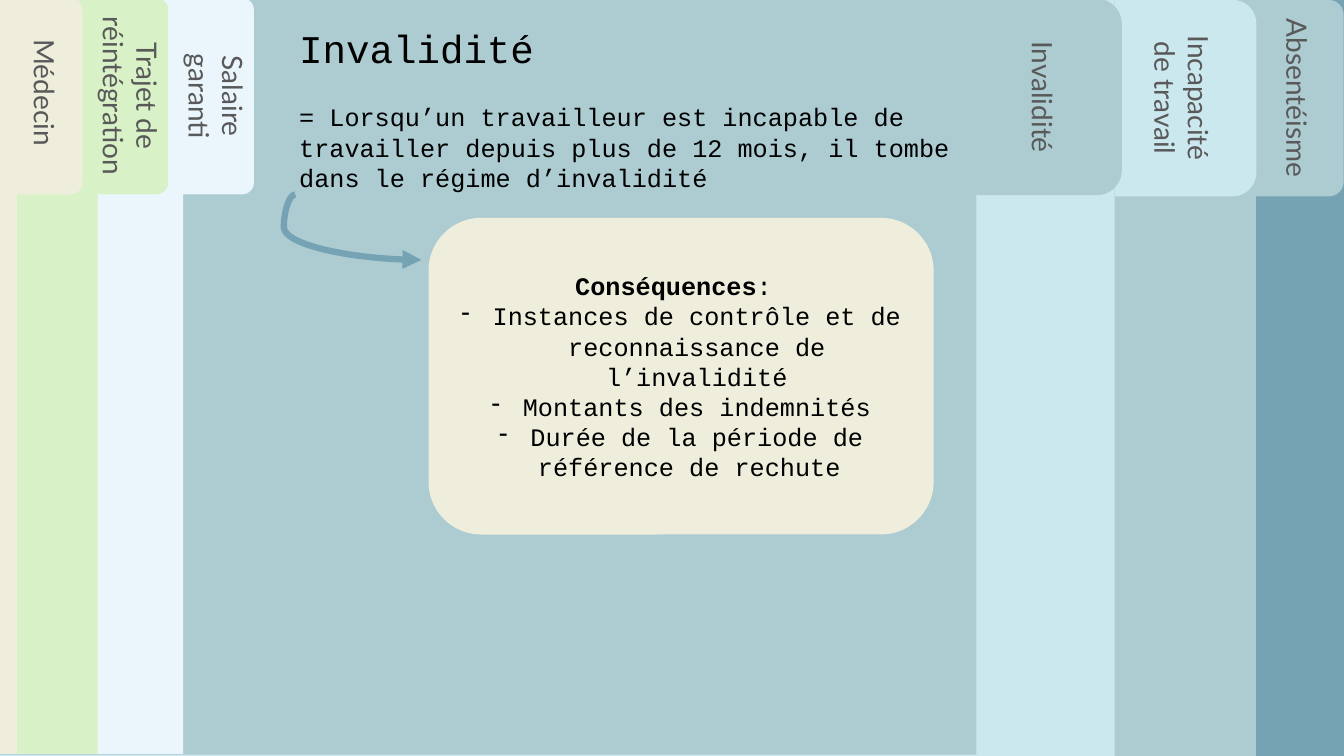
from lxml.etree import SubElement
from pptx import Presentation
from pptx.dml.color import RGBColor
from pptx.enum.shapes import MSO_CONNECTOR, MSO_SHAPE
from pptx.enum.text import MSO_ANCHOR, PP_ALIGN
from pptx.oxml.ns import qn
from pptx.util import Cm, Pt

STEEL = RGBColor(0x75, 0xA3, 0xB3)
TEAL = RGBColor(0xAC, 0xCC, 0xD1)
AQUA = RGBColor(0xCC, 0xE8, 0xEF)
ICE = RGBColor(0xEA, 0xF6, 0xFC)
GREEN = RGBColor(0xD8, 0xF1, 0xC7)
CREAM = RGBColor(0xEF, 0xEE, 0xDD)
GREY = RGBColor(0x59, 0x59, 0x59)
BLACK = RGBColor(0, 0, 0)

SLIDE_WIDTH, SLIDE_HEIGHT = 33.87, 19.05
TAB_HEIGHT = 4.95
TAB_FONT = {"name": "Lato", "size": Pt(20)}
TITLE_FONT = {"name": "Courier New", "size": Pt(28)}
BODY_FONT = {"name": "Courier New", "size": Pt(18)}

# Label, colour, top, right edge of the panel, left edge and width of the tab
DIVIDERS = [
    ("Absentéisme", TEAL, 0, 31.65, 31.65, 2.21),
    ("Incapacité de travail", AQUA, 0, 28.09, 28.1, 3.56),
    ("Invalidité", TEAL, -0.03, 24.61, 24.49, 3.78),
    ("Salaire garanti", ICE, -0.05, 4.62, 4.6, 1.8),
    ("Trajet de réintégration", GREEN, -0.05, 2.46, 2.44, 1.8),
    ("Médecin ", CREAM, -0.05, 0.43, 0.28, 1.8),
]
CONSEQUENCES = [
    "Instances de contrôle et de reconnaissance de l’invalidité",
    "Montants des indemnités",
    "Durée de la période de référence de rechute ",
]


def add_span(para, text, style, color=BLACK, bold=False):
    span = para.add_run()
    span.text = text
    for name, value in style.items():
        setattr(span.font, name, value)
    span.font.bold = bold
    span.font.color.rgb = color


def add_block(page, kind, left, top, width, height, color):
    block = page.shapes.add_shape(kind, Cm(left), Cm(top), Cm(width), Cm(height))
    block.shadow.inherit = False
    block.fill.solid()
    block.fill.fore_color.rgb = color
    block.line.fill.background()
    block.text_frame.word_wrap = True
    block.text_frame.vertical_anchor = MSO_ANCHOR.MIDDLE
    return block


def add_divider(page, label, color, top, panel_right, tab_left, tab_width):
    """Add a full-height panel and its tab, turned so that the label reads downwards."""
    add_block(page, MSO_SHAPE.RECTANGLE, 0, top, panel_right, SLIDE_HEIGHT, color)
    shift = (TAB_HEIGHT - tab_width) / 2
    tab = add_block(page, MSO_SHAPE.ROUND_2_SAME_RECTANGLE, tab_left - shift,
                    top + shift, TAB_HEIGHT, tab_width, color)
    tab.rotation = 90
    para = tab.text_frame.paragraphs[0]
    para.alignment = PP_ALIGN.CENTER
    add_span(para, label, TAB_FONT, GREY)


def add_text(page, left, top, width, height, text, style):
    box = page.shapes.add_textbox(Cm(left), Cm(top), Cm(width), Cm(height))
    box.text_frame.word_wrap = True
    add_span(box.text_frame.paragraphs[0], text, style)


def add_dash(para):
    properties = para._p.get_or_add_pPr()
    properties.set("marL", str(Cm(0.79)))
    properties.set("indent", str(-Cm(0.79)))
    SubElement(properties, qn("a:buChar"), char="-")


def add_consequences(page):
    card = add_block(page, MSO_SHAPE.ROUNDED_RECTANGLE, 10.8, 5.49, 12.73, 7.98, CREAM)
    heading = card.text_frame.paragraphs[0]
    heading.alignment = PP_ALIGN.CENTER
    add_span(heading, "Conséquences", BODY_FONT, bold=True)
    add_span(heading, ": ", BODY_FONT)
    for text in CONSEQUENCES:
        para = card.text_frame.add_paragraph()
        para.alignment = PP_ALIGN.CENTER
        add_dash(para)
        add_span(para, text, BODY_FONT)


def add_curved_arrow(page, start, end, bend):
    """Add a curved arrow; bend places its middle as a share of its width."""
    arrow = page.shapes.add_connector(MSO_CONNECTOR.CURVE, *map(Cm, start + end))
    arrow.line.color.rgb = STEEL
    arrow.line.width = Pt(4.5)
    properties = arrow._element.spPr
    guides = properties.find(qn("a:prstGeom")).find(qn("a:avLst"))
    SubElement(guides, qn("a:gd"), name="adj1", fmla=f"val {round(bend * 100000)}")
    SubElement(properties.find(qn("a:ln")), qn("a:tailEnd"), type="triangle")
    SubElement(properties, qn("a:effectLst"))


def main():
    deck = Presentation()
    deck.slide_width, deck.slide_height = Cm(SLIDE_WIDTH), Cm(SLIDE_HEIGHT)
    page = deck.slides.add_slide(deck.slide_layouts[6])
    page.background.fill.solid()
    page.background.fill.fore_color.rgb = STEEL
    for divider in DIVIDERS:
        add_divider(page, *divider)
    add_text(page, 7.29, 0.48, 14.2, 1.45, "Invalidité", TITLE_FONT)
    add_text(page, 7.29, 2.44, 16.97, 2.57,
             "= Lorsqu’un travailleur est incapable de travailler depuis plus de "
             "12 mois, il tombe dans le régime d’invalidité", BODY_FONT)
    add_curved_arrow(page, (7.44, 4.9), (10.62, 6.55), -0.09)
    add_consequences(page)
    deck.save("out.pptx")


if __name__ == "__main__":
    main()
